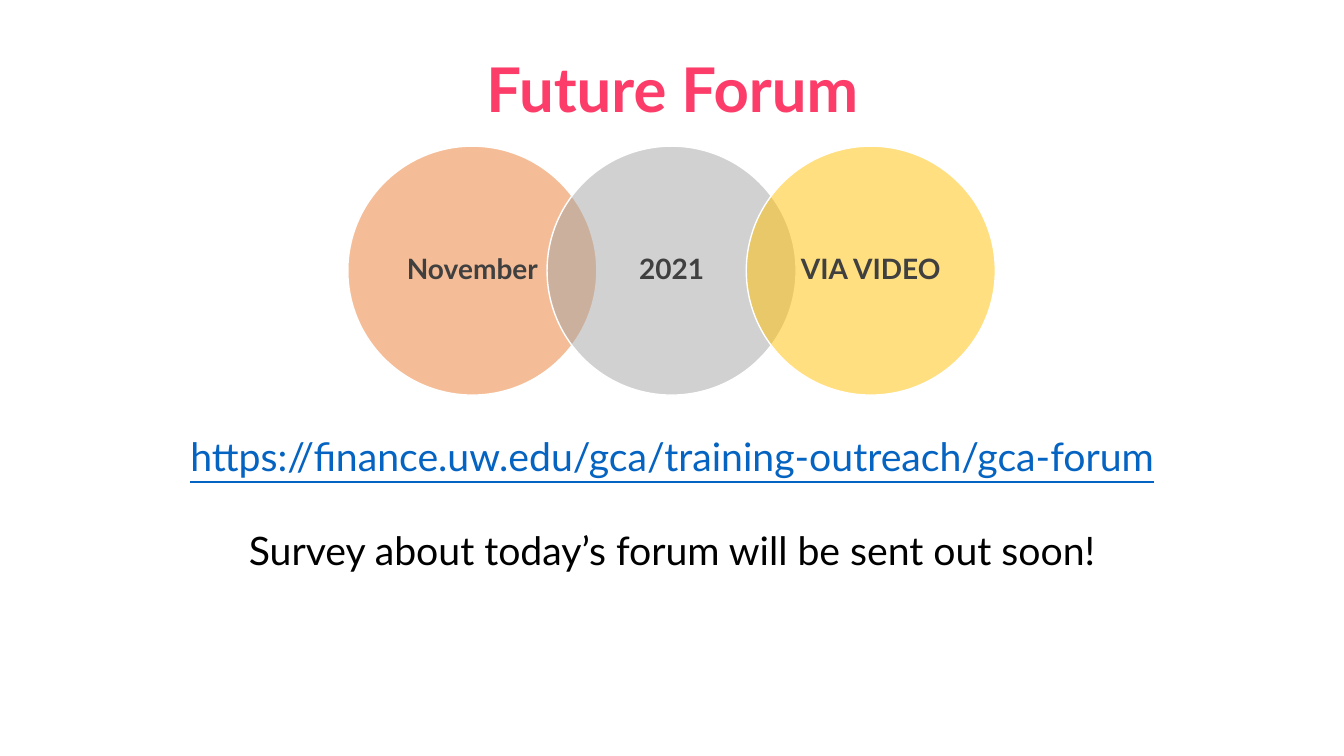
from pptx import Presentation
from pptx.dml.color import RGBColor
from pptx.enum.shapes import MSO_SHAPE
from pptx.enum.text import MSO_ANCHOR, PP_ALIGN
from pptx.oxml.ns import qn
from pptx.util import Inches, Pt
from lxml import etree

PINK = RGBColor(0xFC, 0x3D, 0x69)
ORANGE = RGBColor(0xED, 0x7D, 0x31)
GRAY = RGBColor(0xA5, 0xA5, 0xA5)
GOLD = RGBColor(0xFF, 0xC0, 0x00)
DARK = RGBColor(0x40, 0x40, 0x40)
LINK_BLUE = RGBColor(0x05, 0x63, 0xC1)
BLACK = RGBColor(0, 0, 0)
WHITE = RGBColor(0xFF, 0xFF, 0xFF)

CIRCLES = [("November", ORANGE), ("2021", GRAY), ("VIA VIDEO", GOLD)]


def add_text(s, x, y, w, h, lines, anchor=MSO_ANCHOR.TOP, margins=(0.1, 0.05),
             spacing=1.0, gap=0):
    """Centred text box; lines are (text, colour, font values) tuples."""
    tf = s.shapes.add_textbox(Inches(x), Inches(y), Inches(w), Inches(h)).text_frame
    side, end = map(Inches, margins)
    frame = {"word_wrap": True, "vertical_anchor": anchor,
             "margin_left": side, "margin_right": side,
             "margin_top": end, "margin_bottom": end}
    for name, value in frame.items():
        setattr(tf, name, value)
    for i, (text, color, font) in enumerate(lines):
        p = tf.add_paragraph() if i else tf.paragraphs[0]
        p.alignment = PP_ALIGN.CENTER
        p.line_spacing = spacing
        if i:
            p.space_before = Pt(gap)
        r = p.add_run()
        r.text = text
        r.font.color.rgb = color
        for name, value in {"name": "Lato", **font}.items():
            setattr(r.font, name, value)


def add_title(s, x, y, w, h):
    add_text(s, x, y, w, h, [("Future Forum", PINK, {"size": Pt(44), "bold": True})],
             anchor=MSO_ANCHOR.MIDDLE, spacing=0.9)


def add_circles(s, x, y, size):
    """Row of half-transparent circles, each overlapping the next by a fifth."""
    step = 0.8 * size
    inset = 0.146 * size
    for i, (label, color) in enumerate(CIRCLES):
        left = x + i * step
        sp = s.shapes.add_shape(MSO_SHAPE.OVAL, Inches(left), Inches(y),
                                Inches(size), Inches(size))
        sp.shadow.inherit = False
        sp.fill.solid()
        sp.fill.fore_color.rgb = color
        fill = sp.fill._xPr.find(qn("a:solidFill"))
        etree.SubElement(fill[0], qn("a:alpha"), val="50000")
        sp.line.color.rgb = WHITE
        sp.line.width = Pt(1)
        add_text(s, left + inset, y + inset, size - 2 * inset, size - 2 * inset,
                 [(label, DARK, {"size": Pt(20), "bold": True})],
                 anchor=MSO_ANCHOR.MIDDLE, margins=(0.14, 0.03), spacing=0.9)


def add_details(s, x, y, w, h):
    add_text(s, x, y, w, h, [
        ("https://finance.uw.edu/gca/training-outreach/gca-forum", LINK_BLUE,
         {"size": Pt(28), "underline": True}),
        ("Survey about today’s forum will be sent out soon!", BLACK, {"size": Pt(28)}),
    ], gap=33.6)


def main():
    prs = Presentation()
    prs.slide_width, prs.slide_height = Inches(13.33), Inches(7.5)
    s = prs.slides.add_slide(prs.slide_layouts[6])
    add_circles(s, 3.45, 1.45, 2.47)
    add_title(s, 0.92, 0.19, 11.5, 1.45)
    add_details(s, 1.39, 4.24, 10.55, 1.51)
    prs.save("out.pptx")


if __name__ == "__main__":
    main()
